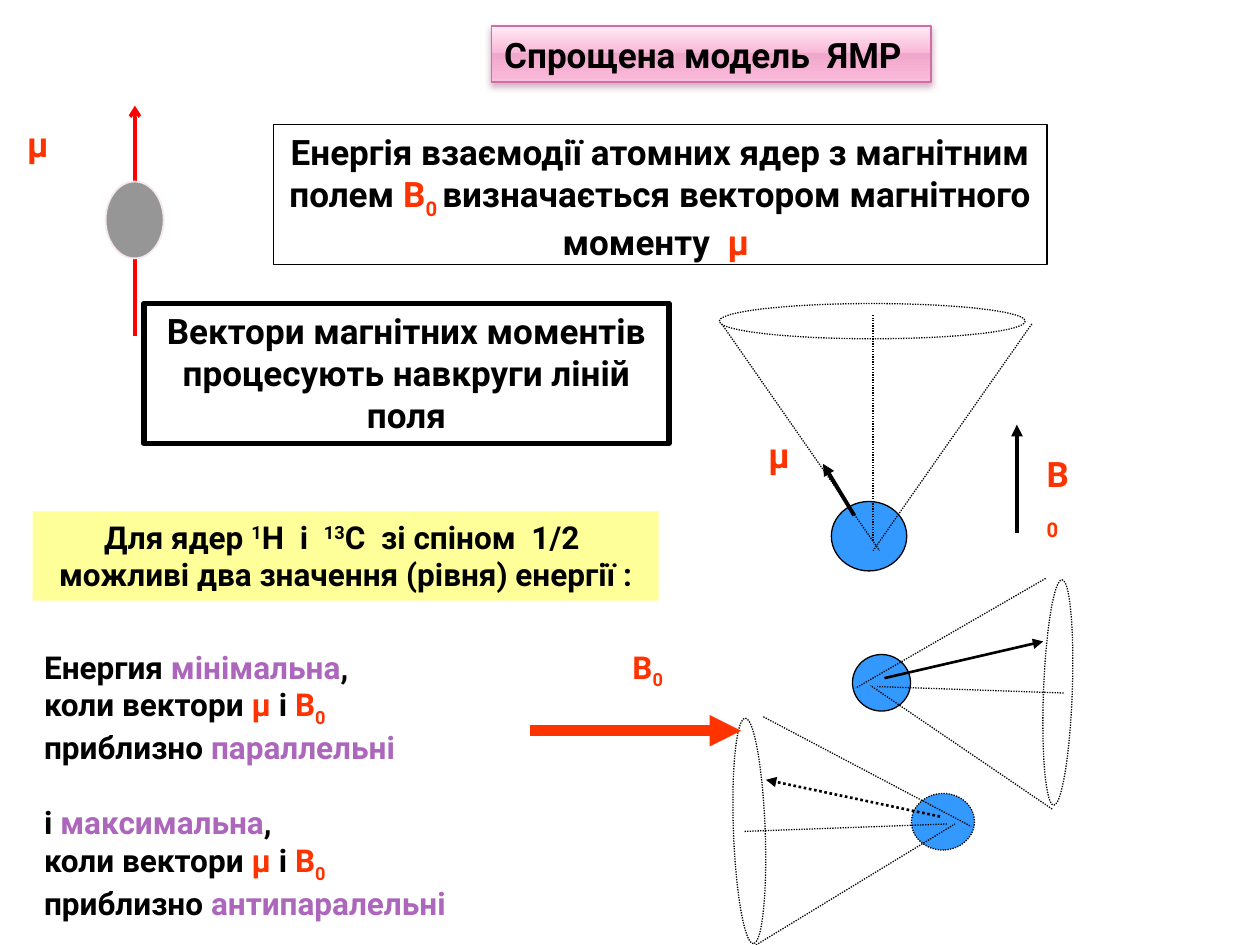
from typing import NamedTuple

from lxml import etree
from pptx import Presentation
from pptx.dml.color import RGBColor
from pptx.enum.dml import MSO_LINE
from pptx.enum.shapes import MSO_CONNECTOR, MSO_SHAPE
from pptx.enum.text import MSO_ANCHOR, MSO_AUTO_SIZE, PP_ALIGN
from pptx.oxml import parse_xml
from pptx.oxml.ns import nsdecls, qn
from pptx.util import Cm, Pt

STRAIGHT = MSO_CONNECTOR.STRAIGHT
ELLIPSE = MSO_SHAPE.OVAL
DOTTED = MSO_LINE.ROUND_DOT
LEFT = PP_ALIGN.LEFT
CENTER = PP_ALIGN.CENTER
TOP = MSO_ANCHOR.TOP
MIDDLE = MSO_ANCHOR.MIDDLE
FIXED_SIZE = MSO_AUTO_SIZE.NONE

FONT = "Roboto"
BLACK = RGBColor(0x00, 0x00, 0x00)
WHITE = RGBColor(0xFF, 0xFF, 0xFF)
RED = RGBColor(0xFF, 0x00, 0x00)
ORANGE = RGBColor(0xFF, 0x33, 0x00)
PURPLE = RGBColor(0xAC, 0x66, 0xBB)
BLUE = RGBColor(0x33, 0x99, 0xFF)
GRAY = RGBColor(0x96, 0x96, 0x96)
PALE_PINK = RGBColor(0xF4, 0xE7, 0xED)
PINK = RGBColor(0xCF, 0x6D, 0xA4)
YELLOW = RGBColor(0xFF, 0xFF, 0x99)
SHADOW = RGBColor(0x89, 0x32, 0x63)
TITLE_STOPS = (
    (0, RGBColor(0xFF, 0xEA, 0xF4)),
    (49, RGBColor(0xF9, 0xB7, 0xD7)),
    (49, RGBColor(0xEF, 0xA7, 0xCB)),
    (92, RGBColor(0xF9, 0xB7, 0xD7)),
    (100, RGBColor(0xF8, 0xC4, 0xDD)),
)
SUBSCRIPT = -25
SUPERSCRIPT = 30


class Box(NamedTuple):
    left: float
    top: float
    width: float
    height: float


class Segment(NamedTuple):
    start_x: float
    start_y: float
    end_x: float
    end_y: float


class Piece(NamedTuple):
    text: str
    color: RGBColor = BLACK
    baseline: int = 0


class Cone(NamedTuple):
    nucleus: Box
    rim: Box
    edges: tuple[Segment, ...]
    moment: Segment
    rotation: float = 0
    moment_width: float = 1.5
    opposed: bool = False


MU = Piece("μ", ORANGE)
FIELD = (Piece("В", ORANGE), Piece("0", ORANGE, SUBSCRIPT))

CONES = (
    Cone(Box(16.76, 10.11, 1.52, 1.4), Box(14.5, 6.12, 6.17, 0.71),
         (Segment(17.6, 6.35, 17.6, 10.92), Segment(20.8, 6.53, 17.6, 11.1),
          Segment(14.55, 6.53, 17.73, 11.1)),
         Segment(17.22, 10.39, 16.59, 9.35), moment_width=2.25),
    Cone(Box(17.2, 13.18, 1.14, 1.17), Box(19.05, 13.67, 4.55, 0.58),
         (Segment(21.44, 13.97, 17.68, 13.84), Segment(21.21, 16.31, 17.55, 13.82),
          Segment(21.08, 11.66, 17.25, 13.87)),
         Segment(17.83, 13.67, 21.03, 12.93), rotation=92.1),
    Cone(Box(18.44, 15.93, 1.14, 1.27), Box(12.83, 16.43, 4.55, 0.64),
         (Segment(15.01, 16.76, 19.1, 16.61), Segment(15.24, 19.05, 19.25, 16.61),
          Segment(15.39, 14.45, 19.58, 16.66)),
         Segment(18.95, 16.46, 15.44, 15.72), rotation=267.9, opposed=True),
)


def write_text(shape, paragraphs, *, size=20, align=LEFT, anchor=TOP, gaps=None):
    frame = shape.text_frame
    frame.word_wrap = True
    frame.auto_size = FIXED_SIZE
    frame.vertical_anchor = anchor
    for index, pieces in enumerate(paragraphs):
        paragraph = frame.add_paragraph() if index else frame.paragraphs[0]
        paragraph.alignment = align
        if gaps and index in gaps:
            paragraph.space_before = Pt(gaps[index])
        for piece in pieces:
            run = paragraph.add_run()
            run.text = piece.text
            run.font.name = FONT
            run.font.size = Pt(size)
            run.font.bold = True
            run.font.color.rgb = piece.color
            if piece.baseline:
                run.font._element.set("baseline", str(piece.baseline * 1000))


def add_text(slide, box: Box, paragraphs, *, fill=None, line_width=0, **text_format):
    shape = slide.shapes.add_textbox(*map(Cm, box))
    if fill is not None:
        shape.fill.solid()
        shape.fill.fore_color.rgb = fill
    if line_width:
        shape.line.color.rgb = BLACK
        shape.line.width = Pt(line_width)
    write_text(shape, paragraphs, **text_format)


def add_ellipse(slide, box: Box, *, fill=None, line=BLACK, width=0.75, dash=None, rotation=0):
    shape = slide.shapes.add_shape(ELLIPSE, *map(Cm, box))
    shape.shadow.inherit = False
    shape.rotation = rotation
    if fill is None:
        shape.fill.background()
    else:
        shape.fill.solid()
        shape.fill.fore_color.rgb = fill
    shape.line.color.rgb = line
    shape.line.width = Pt(width)
    shape.line.dash_style = dash


def add_line(slide, segment: Segment, *, color=BLACK, width=0.75, dash=None, head=None):
    connector = slide.shapes.add_connector(STRAIGHT, *map(Cm, segment))
    connector.line.color.rgb = color
    connector.line.width = Pt(width)
    connector.line.dash_style = dash
    properties = connector._element.spPr
    if head:
        etree.SubElement(properties.find(qn("a:ln")), qn("a:tailEnd"), type=head)
    etree.SubElement(properties, qn("a:effectLst"))


def add_cone(slide, cone: Cone):
    dash = DOTTED if cone.opposed else None
    add_ellipse(slide, cone.nucleus, fill=BLUE, dash=dash, rotation=cone.rotation)
    add_ellipse(slide, cone.rim, dash=DOTTED, rotation=cone.rotation)
    for edge in cone.edges:
        add_line(slide, edge, dash=DOTTED)
    add_line(slide, cone.moment, width=cone.moment_width, dash=dash, head="triangle")


def format_title(title):
    title.left, title.top, title.width, title.height = map(Cm, Box(9.91, 0.53, 8.86, 1.12))
    title.fill.gradient()
    title.fill.gradient_angle = 270
    title.line.color.rgb = PINK
    title.line.width = Pt(0.9)
    properties = title._element.spPr
    stops = properties.find(f".//{qn('a:gsLst')}")
    for stop in list(stops):
        stops.remove(stop)
    for position, color in TITLE_STOPS:
        stop = etree.SubElement(stops, qn("a:gs"), pos=str(position * 1000))
        etree.SubElement(stop, qn("a:srgbClr"), val=str(color))
    properties.append(parse_xml(
        f'<a:effectLst {nsdecls("a")}><a:outerShdw blurRad="{Pt(4)}" dist="{Pt(2)}" '
        f'dir="5400000" rotWithShape="0"><a:srgbClr val="{SHADOW}"><a:alpha val="38000"/>'
        '</a:srgbClr></a:outerShdw></a:effectLst>'))
    write_text(title, [[Piece("Спрощена модель  ЯМР")]], anchor=MIDDLE)


def energy_statement(opening: str, level: str, direction: str):
    return [
        [Piece(opening), Piece(level, PURPLE), Piece(",")],
        [Piece("коли вектори "), Piece("μ ", ORANGE), Piece("і "), *FIELD],
        [Piece("приблизно "), Piece(direction, PURPLE)],
    ]


def main():
    presentation = Presentation()
    presentation.slide_width, presentation.slide_height = Cm(25.4), Cm(19.05)
    slide = presentation.slides.add_slide(presentation.slide_layouts[5])
    format_title(slide.shapes.title)

    add_line(slide, Segment(2.72, 6.78, 2.72, 2.13), color=RED, width=2, head="arrow")
    add_ellipse(slide, Box(2.13, 3.66, 1.17, 1.55), fill=GRAY, line=PALE_PINK, width=1)
    add_text(slide, Box(0.3, 2.34, 1.5, 1.12), [[MU]])
    add_text(slide, Box(5.51, 2.51, 15.6, 2.82), [[
        Piece("Енергія взаємодії атомних ядер з магнітним полем "), Piece("B", ORANGE),
        Piece("0 ", ORANGE, SUBSCRIPT), Piece("визначається вектором магнітного моменту  "),
        Piece("μ ", ORANGE)]], line_width=0.75, align=CENTER)

    for cone in CONES:
        add_cone(slide, cone)
    add_text(slide, Box(15.24, 8.61, 0.76, 0.81), [[MU]])
    add_line(slide, Segment(20.5, 10.74, 20.5, 8.56), width=2.25, head="triangle")
    add_text(slide, Box(20.85, 8.99, 0.99, 0.81), [FIELD])

    add_text(slide, Box(2.9, 6.12, 10.59, 2.82),
             [[Piece("Вектори магнітних моментів процесують навкруги ліній поля")]],
             fill=WHITE, line_width=3.15, align=CENTER)
    add_text(slide, Box(0.66, 10.31, 12.62, 1.8), [
        [Piece("Для ядер "), Piece("1", baseline=SUPERSCRIPT), Piece("Н  і  "),
         Piece("13", baseline=SUPERSCRIPT), Piece("С  зі спіном  1/2 ")],
        [Piece("можливі два значення (рівня) енергії :")]],
        fill=YELLOW, size=18, align=CENTER)
    add_text(slide, Box(0.64, 12.93, 8.94, 5.64),
             energy_statement("Енергия ", "мінімальна", "параллельні")
             + energy_statement("і ", "максимальна", "антипаралельні"),
             size=18, gaps={3: 21})
    add_text(slide, Box(12.5, 12.93, 1.5, 1.02), [FIELD], size=18)
    add_line(slide, Segment(10.69, 14.73, 14.94, 14.73), color=ORANGE, width=6, head="triangle")
    presentation.save("out.pptx")


if __name__ == "__main__":
    main()
